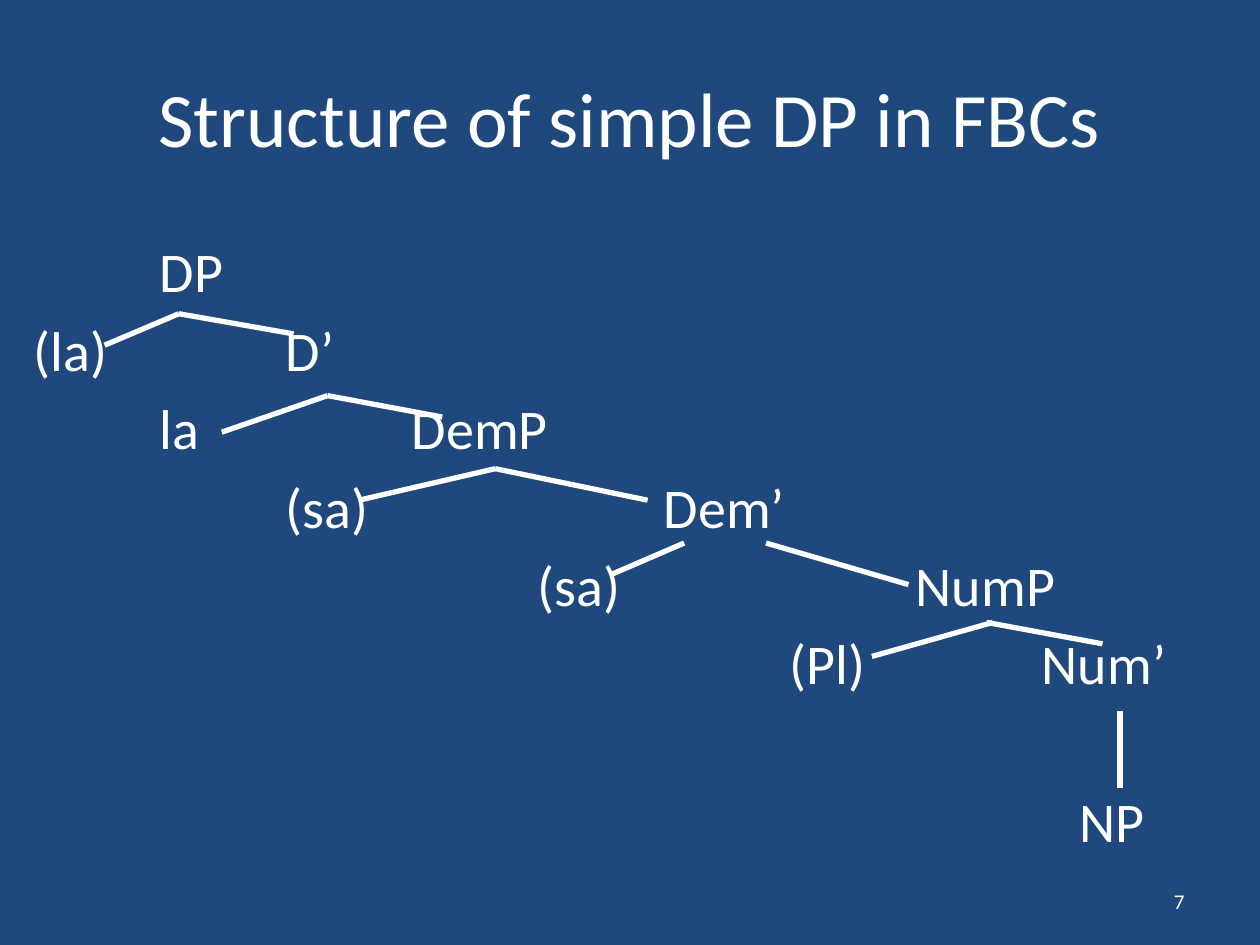
import pptx
import pptx.util
import pptx.dml.color
import pptx.enum.shapes
import pptx.enum.text
import pptx.oxml.ns
import lxml.etree
from pptx.util import Inches

COLORS = {"background": "1F497D", "white": "FFFFFF"}
WHITE = pptx.dml.color.RGBColor.from_string(COLORS["white"])
ALIGN = pptx.enum.text.PP_ALIGN
MIDDLE = pptx.enum.text.MSO_ANCHOR.MIDDLE
qn = pptx.oxml.ns.qn


def add_run(p, text, size):
    r = p.add_run()
    r.text = text
    r.font.name = "Calibri"
    r.font.size = pptx.util.Pt(size)
    r.font.color.rgb = WHITE


prs = pptx.Presentation()
prs.slide_width, prs.slide_height = Inches(10), Inches(7.5)
s = prs.slides.add_slide(prs.slide_layouts[5])
s.background.fill.solid()
s.background.fill.fore_color.rgb = pptx.dml.color.RGBColor.from_string(COLORS["background"])

# Tree nodes: each row lists (one-inch tab column, label)
rows = [
    [(1, "DP")],
    [(0, "(la)"), (2, "D’")],
    [(1, "la"), (3, "DemP")],
    [(2, "(sa)"), (5, "Dem’")],
    [(4, "(sa)"), (7, "NumP")],
    [(6, "(Pl)"), (8, "Num’")],
    [(0, "NP")],
]
sp = s.shapes.add_textbox(Inches(0.17), Inches(1.83), Inches(9.33), Inches(5.42))
tf = sp.text_frame
tf.word_wrap = True
for i, row in enumerate(rows):
    p = tf.paragraphs[0] if i == 0 else tf.add_paragraph()
    p.space_before = pptx.util.Pt(6.4)
    text, column = "", 0
    for target, label in row:
        text += "\t" * (target - column) + label
        column = target
    add_run(p, text, 32)
    if column:
        tabs = lxml.etree.SubElement(p._p.get_or_add_pPr(), qn("a:tabLst"))
        for stop in range(1, column + 1):
            lxml.etree.SubElement(tabs, qn("a:tab"), pos=str(Inches(stop)), algn="l")

# NP hangs one row lower, centred under Num’
p.space_before = pptx.util.Pt(51.5)
p._p.get_or_add_pPr().set("marL", str(Inches(8.3)))
p._p.get_or_add_pPr().set("indent", "0")

# Branches: (x1, y1, x2, y2)
branches = [
    (1.42, 2.49, 0.83, 2.74), (1.42, 2.49, 2.33, 2.65),
    (2.6, 3.14, 1.76, 3.43), (2.6, 3.14, 3.51, 3.31),
    (3.93, 3.72, 2.85, 3.97), (3.93, 3.72, 5.14, 3.97),
    (5.43, 4.31, 4.85, 4.56), (6.08, 4.31, 7.21, 4.64),
    (7.88, 4.94, 6.92, 5.21), (7.83, 4.94, 8.75, 5.11),
    (8.89, 5.64, 8.89, 6.25),
]
for branch in branches:
    line = s.shapes.add_connector(
        pptx.enum.shapes.MSO_CONNECTOR.STRAIGHT, *[Inches(v) for v in branch])
    line.line.color.rgb = WHITE
    line.line.width = pptx.util.Pt(3)
    lxml.etree.SubElement(line._element.spPr, qn("a:effectLst"))

# Title
sp = s.shapes.title
sp.left, sp.top, sp.width, sp.height = Inches(0.5), Inches(0.3), Inches(9), Inches(1.25)
tf = sp.text_frame
tf.vertical_anchor = MIDDLE
p = tf.paragraphs[0]
p.alignment = ALIGN.CENTER
add_run(p, "Structure of simple DP in FBCs", 44)

# Slide number
sp = s.shapes.add_textbox(Inches(7.17), Inches(6.95), Inches(2.33), Inches(0.4))
tf = sp.text_frame
tf.word_wrap = True
tf.vertical_anchor = MIDDLE
p = tf.paragraphs[0]
p.alignment = ALIGN.RIGHT
add_run(p, "7", 12)

prs.save("out.pptx")
